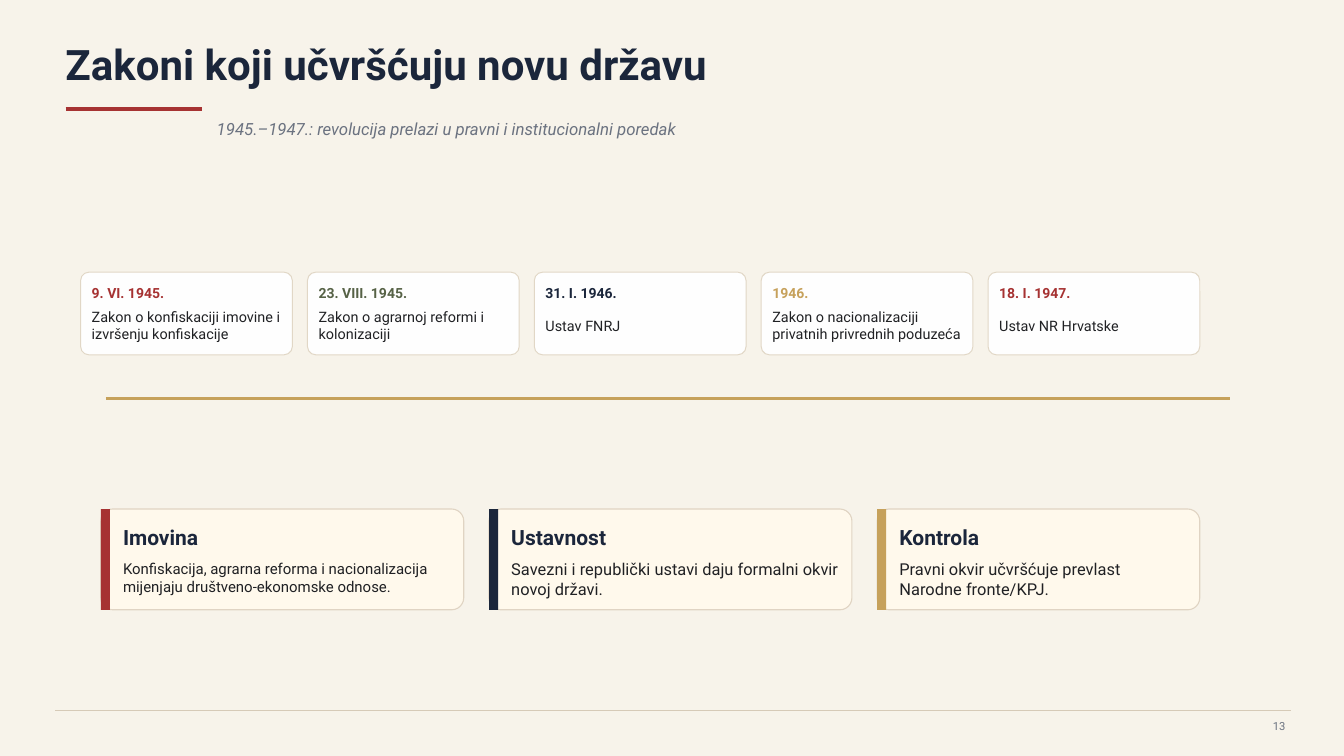
from lxml import etree
from pptx import Presentation
from pptx.dml.color import RGBColor
from pptx.enum import shapes, text
from pptx.oxml.ns import qn
from pptx.util import Inches, Pt

NAVY, RED, GOLD, GREEN = "1B263B", "A63232", "C6A15B", "566246"
INK, GRAY = "202124", "6B7280"
ROUND, RECT = shapes.MSO_SHAPE.ROUNDED_RECTANGLE, shapes.MSO_SHAPE.RECTANGLE
MIDDLE, TOP = text.MSO_ANCHOR.MIDDLE, text.MSO_ANCHOR.TOP
color = RGBColor.from_string

deck = Presentation()
deck.slide_width, deck.slide_height = Inches(13.33), Inches(7.5)
slide = deck.slides.add_slide(deck.slide_layouts[6])
slide.background.fill.solid()
slide.background.fill.fore_color.rgb = color("F7F3EA")


def write(words, x, y, w, h, size, hue, bold=False, italic=False, anchor=MIDDLE):
    """Add a text box without margins and return its paragraph."""
    frame = slide.shapes.add_textbox(Inches(x), Inches(y), Inches(w), Inches(h)).text_frame
    frame.word_wrap = True
    frame.vertical_anchor = anchor
    frame.margin_left = frame.margin_right = frame.margin_top = frame.margin_bottom = 0
    para = frame.paragraphs[0]
    run = para.add_run()
    run.text = words
    font = run.font
    font.name, font.size, font.bold, font.italic = "Roboto", Pt(size), bold, italic
    font.color.rgb = color(hue)
    return para


def block(kind, x, y, w, h, fill, edge=None, width=0, bend=0):
    """Add a filled shape; edge is its outline colour, bend its corner rounding."""
    shape = slide.shapes.add_shape(kind, Inches(x), Inches(y), Inches(w), Inches(h))
    shape.shadow.inherit = False
    shape.fill.solid()
    shape.fill.fore_color.rgb = color(fill)
    if edge:
        shape.line.color.rgb = color(edge)
        shape.line.width = Pt(width)
        shape.adjustments[0] = bend
    else:
        shape.line.fill.background()
    return shape


# Heading
write("Zakoni koji učvršćuju novu državu", 0.65, 0.38, 8.4, 0.5, 30, NAVY, bold=True)
write("1945.–1947.: revolucija prelazi u pravni i institucionalni poredak",
      2.15, 1.16, 8.5, 0.24, 12, GRAY, italic=True)

# Title rule, timeline axis, footer rule
rules = [(0.65, 2, 1.08, RED, 3), (1.05, 12.2, 3.95, GOLD, 2), (0.55, 12.8, 7.05, "D6CAB7", 0.7)]
for start, end, y, hue, width in rules:
    rule = slide.shapes.add_connector(shapes.MSO_CONNECTOR.STRAIGHT,
                                      Inches(start), Inches(y), Inches(end), Inches(y))
    rule.line.color.rgb = color(hue)
    rule.line.width = Pt(width)
    etree.SubElement(rule._element.spPr, qn("a:effectLst"))

# Timeline cards
laws = [
    ("9. VI. 1945.", RED, "Zakon o konfiskaciji imovine i izvršenju konfiskacije"),
    ("23. VIII. 1945.", GREEN, "Zakon o agrarnoj reformi i kolonizaciji"),
    ("31. I. 1946.", NAVY, "Ustav FNRJ"),
    ("1946.", GOLD, "Zakon o nacionalizaciji privatnih privrednih poduzeća"),
    ("18. I. 1947.", RED, "Ustav NR Hrvatske"),
]
for i, (date, hue, law) in enumerate(laws):
    x = 0.8 + 2.25 * i
    card = block(ROUND, x, 2.7, 2.1, 0.82, "FFFFFF", "E1D7C6", 0.7, 0.1)
    tint = card._element.spPr.find(qn("a:solidFill"))[0]
    etree.SubElement(tint, qn("a:alpha"), val="97000")
    write(date, x + 0.11, 2.8, 1.88, 0.22, 10, hue, bold=True)
    write(law, x + 0.11, 3.05, 1.88, 0.36, 10.3, INK)

# Theme cards
themes = [
    ("Imovina", RED, 3.6, 10.7,
     "Konfiskacija, agrarna reforma i nacionalizacija mijenjaju društveno-ekonomske odnose."),
    ("Ustavnost", NAVY, 3.6, 11.7,
     "Savezni i republički ustavi daju formalni okvir novoj državi."),
    ("Kontrola", GOLD, 3.2, 11.7,
     "Pravni okvir učvršćuje prevlast Narodne fronte/KPJ."),
]
for i, (name, hue, w, size, body) in enumerate(themes):
    x = 1 + 3.85 * i
    block(ROUND, x, 5.05, w, 1, "FFF9EC", "E0D4C3", 0.8, 0.12)
    block(RECT, x, 5.05, 0.09, 1, hue)
    write(name, x + 0.22, 5.19, w - 0.35, 0.28, 15, NAVY, bold=True)
    write(body, x + 0.22, 5.55, w - 0.35, 0.38, size, INK, anchor=TOP)

# Page number
page = write("13", 12.25, 7.1, 0.5, 0.2, 8, GRAY)
page.alignment = text.PP_ALIGN.RIGHT

deck.save("out.pptx")
